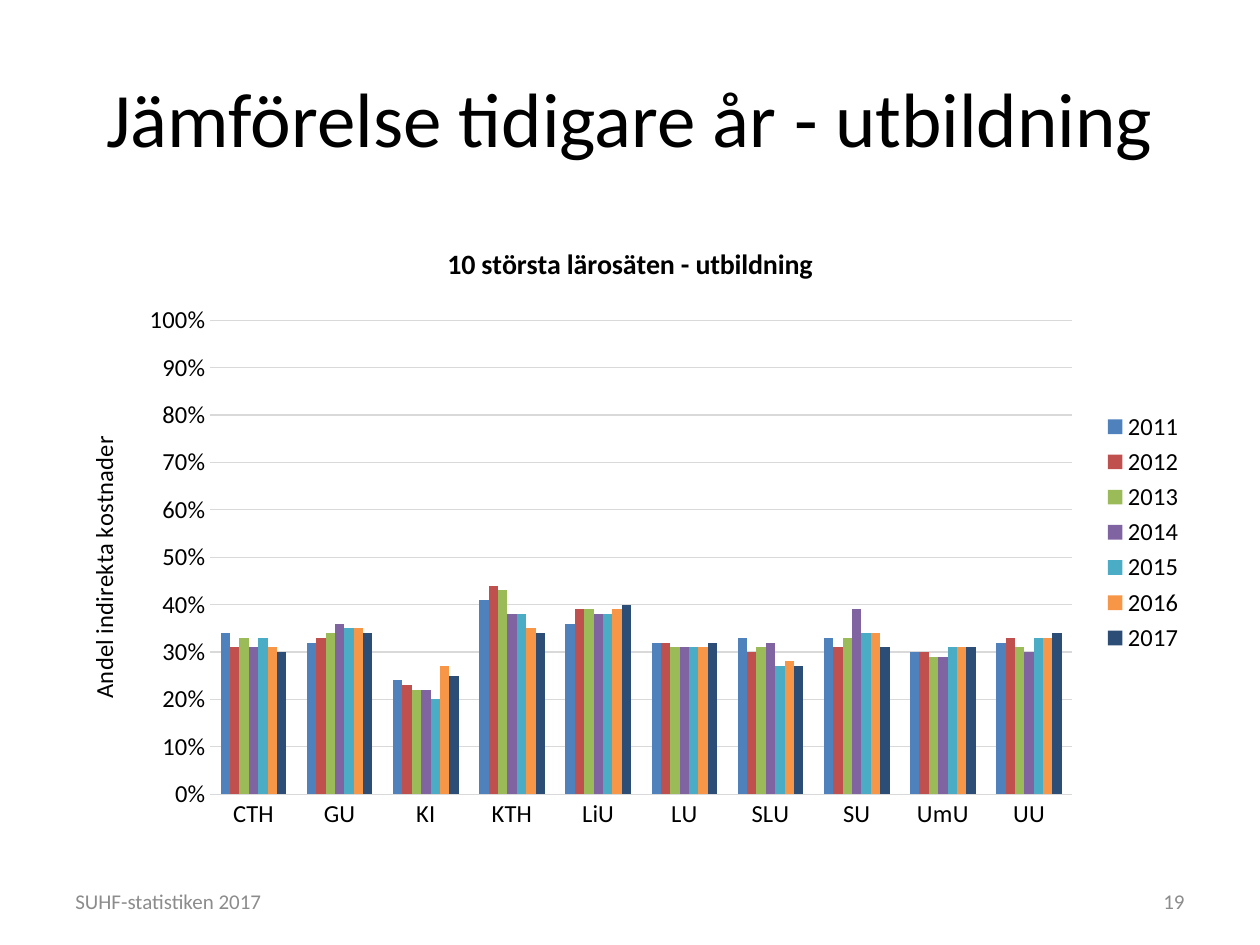
import pptx
import pptx.chart.data
import pptx.dml.color
import pptx.enum.chart
import pptx.enum.text
import pptx.oxml
import pptx.oxml.ns
import pptx.util

PX = 9144
FONT = "Calibri"
BLACK, GREY, GRID = "000000", "8C8C8C", "D9D9D9"
ALIGN = pptx.enum.text.PP_ALIGN

UNIVERSITIES = ["CTH", "GU", "KI", "KTH", "LiU", "LU", "SLU", "SU", "UmU", "UU"]
YEARS = [
    ("2011", "4F81BD", [34, 32, 24, 41, 36, 32, 33, 33, 30, 32]),
    ("2012", "C0504D", [31, 33, 23, 44, 39, 32, 30, 31, 30, 33]),
    ("2013", "9BBB59", [33, 34, 22, 43, 39, 31, 31, 33, 29, 31]),
    ("2014", "8064A2", [31, 36, 22, 38, 38, 31, 32, 39, 29, 30]),
    ("2015", "4BACC6", [33, 35, 20, 38, 38, 31, 27, 34, 31, 33]),
    ("2016", "F79646", [31, 35, 27, 35, 39, 31, 28, 34, 31, 33]),
    ("2017", "2C4D75", [30, 34, 25, 34, 40, 32, 27, 31, 31, 34]),
]


def rgb(color):
    return pptx.dml.color.RGBColor.from_string(color)


def emu(*lengths):
    return [pptx.util.Emu(length * PX) for length in lengths]


def set_font(font, size, color=BLACK, bold=False):
    font.name = FONT
    font.size = pptx.util.Pt(size)
    font.bold = bold
    font.color.rgb = rgb(color)


def set_line(line, color):
    line.color.rgb = rgb(color)
    line.width = pptx.util.Pt(0.75)


def write(tf, text, size, color=BLACK, bold=False, align=ALIGN.LEFT):
    p = tf.paragraphs[0]
    p.alignment = align
    r = p.add_run()
    r.text = text
    set_font(r.font, size, color, bold)


def add_text(s, box, text, **fmt):
    tf = s.shapes.add_textbox(*emu(*box)).text_frame
    tf.word_wrap = True
    tf.vertical_anchor = pptx.enum.text.MSO_ANCHOR.MIDDLE
    write(tf, text, **fmt)


def set_plot_layout(chart, x, y, w, h):
    plot_area = chart._chartSpace.chart.plotArea
    for old in plot_area.findall(pptx.oxml.ns.qn("c:layout")):
        plot_area.remove(old)
    plot_area.insert(0, pptx.oxml.parse_xml(
        f'<c:layout {pptx.oxml.ns.nsdecls("c")}><c:manualLayout>'
        '<c:layoutTarget val="inner"/><c:xMode val="edge"/><c:yMode val="edge"/>'
        f'<c:x val="{x}"/><c:y val="{y}"/><c:w val="{w}"/><c:h val="{h}"/>'
        '</c:manualLayout></c:layout>'))


def format_axes(chart):
    no_tick = pptx.enum.chart.XL_TICK_MARK.NONE
    for axis in (chart.category_axis, chart.value_axis):
        axis.major_tick_mark = axis.minor_tick_mark = no_tick
        set_font(axis.tick_labels.font, 14)
    set_line(chart.category_axis.format.line, GRID)

    axis = chart.value_axis
    axis.minimum_scale, axis.maximum_scale, axis.major_unit = 0, 1, 0.1
    axis.tick_labels.number_format = "0%"
    axis.tick_labels.number_format_is_linked = False
    axis.format.line.fill.background()
    axis.has_major_gridlines = True
    set_line(axis.major_gridlines.format.line, GRID)
    write(axis.axis_title.text_frame, "Andel indirekta kostnader", 14, align=ALIGN.CENTER)


def add_cost_chart(s, box):
    data = pptx.chart.data.CategoryChartData(number_format="0%")
    data.categories = UNIVERSITIES
    for year, _, percents in YEARS:
        data.add_series(year, [percent / 100 for percent in percents])
    kind = pptx.enum.chart.XL_CHART_TYPE.COLUMN_CLUSTERED
    chart = s.shapes.add_chart(kind, *emu(*box), data).chart
    set_font(chart.font, 14)
    chart.has_title = True
    write(chart.chart_title.text_frame, "10 största lärosäten - utbildning", 16,
          bold=True, align=ALIGN.CENTER)
    chart.chart_title.include_in_layout = False

    plot = chart.plots[0]
    plot.gap_width = 219
    plot.overlap = 0
    plot.vary_by_categories = False
    for series, (_, color, _) in zip(plot.series, YEARS):
        series.format.fill.solid()
        series.format.fill.fore_color.rgb = rgb(color)

    format_axes(chart)
    chart.has_legend = True
    chart.legend.position = pptx.enum.chart.XL_LEGEND_POSITION.RIGHT
    chart.legend.include_in_layout = False
    set_font(chart.legend.font, 14)
    set_plot_layout(chart, 0.13, 0.16, 0.76, 0.76)


def add_footer(s, box):
    left, top, width, height = box
    number_width = 233
    add_text(s, (left, top, 2 * number_width, height), "SUHF-statistiken 2017",
             size=12, color=GREY)
    add_text(s, (left + width - number_width, top, number_width, height), "19",
             size=12, color=GREY, align=ALIGN.RIGHT)


def main():
    prs = pptx.Presentation()
    prs.slide_width, prs.slide_height = emu(1000, 750)
    s = prs.slides.add_slide(prs.slide_layouts[6])
    left, width = 50, 900
    add_cost_chart(s, (left, 175, width, 495))
    add_text(s, (left, 30, width, 125), "Jämförelse tidigare år - utbildning",
             size=44, align=ALIGN.CENTER)
    add_footer(s, (left, 695, width, 40))
    prs.save("out.pptx")


if __name__ == "__main__":
    main()
